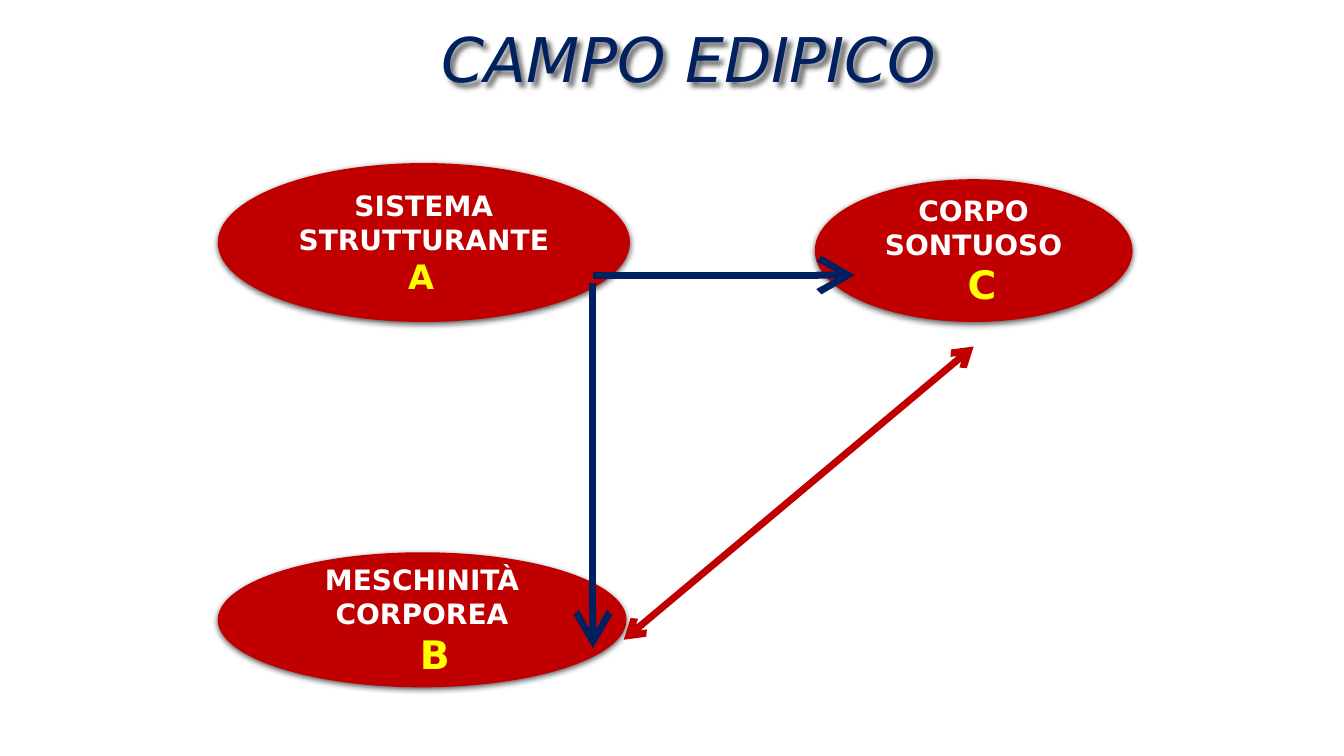
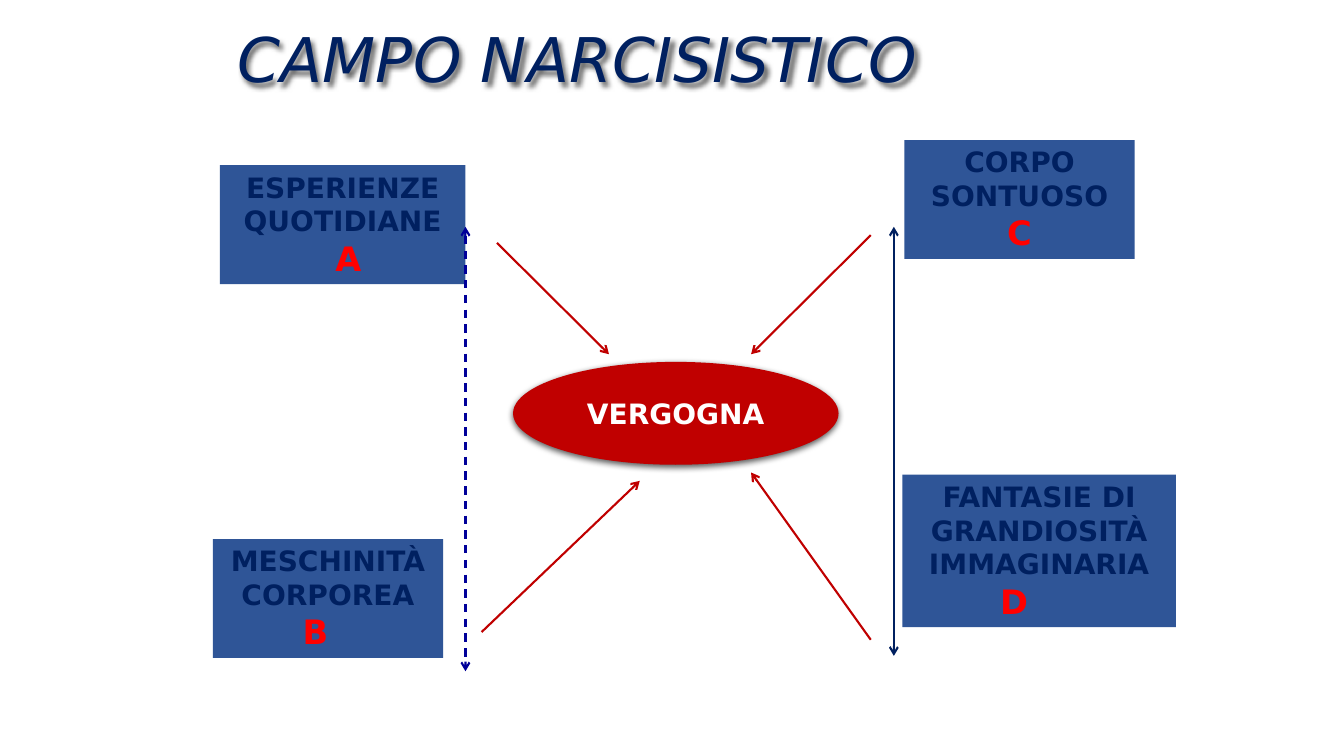
from lxml import etree
from pptx import Presentation
from pptx.dml.color import RGBColor
from pptx.enum.dml import MSO_LINE
from pptx.enum.shapes import MSO_CONNECTOR, MSO_SHAPE
from pptx.enum.text import MSO_ANCHOR, MSO_AUTO_SIZE, PP_ALIGN
from pptx.oxml.ns import qn
from pptx.util import Pt

CENTER, LEFT = PP_ALIGN.CENTER, PP_ALIGN.LEFT
MIDDLE, TOP = MSO_ANCHOR.MIDDLE, MSO_ANCHOR.TOP
NO_FIT, GROW = MSO_AUTO_SIZE.NONE, MSO_AUTO_SIZE.SHAPE_TO_FIT_TEXT
STRAIGHT, OVAL, DASH = MSO_CONNECTOR.STRAIGHT, MSO_SHAPE.OVAL, MSO_LINE.DASH

FONT = "DejaVu Sans"
NAVY = RGBColor(0x00, 0x20, 0x60)
INDIGO = RGBColor(0x00, 0x00, 0x99)
BLUE = RGBColor(0x2F, 0x55, 0x97)
CRIMSON = RGBColor(0xC0, 0x00, 0x00)
RED = RGBColor(0xFF, 0x00, 0x00)
YELLOW = RGBColor(0xFF, 0xFF, 0x00)
WHITE = RGBColor(0xFF, 0xFF, 0xFF)

# Shadows: blur, distance, angle, opacity in percent
TITLE_SHADOW = (4, 3, 45, 60)
OVAL_SHADOW = (4.5, 1.5, 90, 63)

# Concepts: box (left, top, width, height), label, letter, letter size, letter shift
# Arrows: from, to, colour, width, both ends, head size, dashed
SLIDES = [
    {
        "title": ("CAMPO EDIPICO", 168.5, CENTER),
        "ovals": [
            ((155.5, 116.5, 294.5, 113.5), "SISTEMA STRUTTURANTE", "A", 24, -2),
            ((582, 128, 227, 102), "CORPO SONTUOSO", "C", 28, 6),
            ((155.5, 394.5, 292, 96.5), "MESCHINITÀ CORPOREA", "B", 28, 9),
        ],
        "boxes": [],
        "arrows": [
            ((423.5, 196.5), (610.5, 196.5), NAVY, 5, False, "lg", False),
            ((423.5, 202.5), (423.5, 463), NAVY, 5, False, "lg", False),
            ((445.5, 457), (695.5, 247.5), CRIMSON, 5, True, "med", False),
        ],
    },
    {
        "title": ("CAMPO NARCISISTICO", 162.5, LEFT),
        "ovals": [((366.5, 258.5, 232.5, 73.5), "VERGOGNA", None, 0, 0)],
        "boxes": [
            ((157, 118, 175.5, 85), "ESPERIENZE QUOTIDIANE", "A", 24, 4),
            ((152, 385, 164.5, 85), "MESCHINITÀ CORPOREA", "B", 24, -9),
            ((646, 100, 164.5, 85), "CORPO SONTUOSO", "C", 24, 0),
            ((644.5, 339, 195.5, 109), "FANTASIE DI GRANDIOSITÀ IMMAGINARIA", "D", 24, -18),
        ],
        "arrows": [
            ((355, 173.5), (435, 253), CRIMSON, 1.5, False, "med", False),
            ((344, 451.5), (457, 343.5), CRIMSON, 1.5, False, "med", False),
            ((622, 168), (536.5, 253), CRIMSON, 1.5, False, "med", False),
            ((622, 457), (536.5, 337.5), CRIMSON, 1.5, False, "med", False),
            ((638.5, 162), (638.5, 468.5), NAVY, 1.5, True, "med", False),
            ((332.5, 162), (332.5, 479.5), INDIGO, 1.5, True, "med", True),
        ],
    },
]


def points(values):
    return [Pt(value) for value in values]


def add_shadow(shape, blur, distance, angle, opacity):
    shape.shadow.inherit = False
    effects = shape._element.spPr.find(qn("a:effectLst"))
    shadow = etree.SubElement(effects, qn("a:outerShdw"), blurRad=str(Pt(blur)),
                              dist=str(Pt(distance)), dir=str(angle * 60000),
                              algn="ctr", rotWithShape="0")
    color = etree.SubElement(shadow, qn("a:srgbClr"), val="000000")
    etree.SubElement(color, qn("a:alpha"), val=str(opacity * 1000))


def format_paragraph(paragraph, text, size, color, align=CENTER, bold=False, italic=False):
    paragraph.text = text
    paragraph.alignment = align
    font = paragraph.font
    font.name, font.size, font.bold, font.italic = FONT, Pt(size), bold, italic
    font.color.rgb = color


def add_title(slide, text, left, align):
    title = slide.shapes.title
    title.left, title.top, title.width, title.height = points((left, 0, 648, 90))
    frame = title.text_frame
    frame.vertical_anchor, frame.auto_size, frame.word_wrap = MIDDLE, NO_FIT, True
    format_paragraph(frame.paragraphs[0], text, 44, NAVY, align, italic=True)
    frame.paragraphs[0].line_spacing = 0.9
    add_shadow(title, *TITLE_SHADOW)


def write_concept(frame, label, color, letter, size, shift, letter_color):
    """Write a label and, below it, its letter moved sideways by shift points."""
    frame.word_wrap = True
    format_paragraph(frame.paragraphs[0], label, 20, color, bold=True)
    if letter:
        paragraph = frame.add_paragraph()
        format_paragraph(paragraph, letter, size, letter_color, bold=True)
        # A centred line moves by half of its margin.
        margin = "marL" if shift > 0 else "marR"
        paragraph._p.get_or_add_pPr().set(margin, str(Pt(2 * abs(shift))))


def add_oval(slide, bounds, label, letter, size, shift):
    oval = slide.shapes.add_shape(OVAL, *points(bounds))
    oval.fill.solid()
    oval.fill.fore_color.rgb = CRIMSON
    oval.line.fill.background()
    add_shadow(oval, *OVAL_SHADOW)
    oval.text_frame.vertical_anchor = MIDDLE
    write_concept(oval.text_frame, label, WHITE, letter, size, shift, YELLOW)


def add_box(slide, bounds, label, letter, size, shift):
    box = slide.shapes.add_textbox(*points(bounds))
    box.fill.solid()
    box.fill.fore_color.rgb = BLUE
    box.text_frame.vertical_anchor, box.text_frame.auto_size = TOP, GROW
    write_concept(box.text_frame, label, NAVY, letter, size, shift, RED)


def add_arrow(slide, start, end, color, width, both_ends, head_size, dashed):
    arrow = slide.shapes.add_connector(STRAIGHT, *points(start + end))
    arrow.line.color.rgb = color
    arrow.line.width = Pt(width)
    if dashed:
        arrow.line.dash_style = DASH
    outline = arrow.line._get_or_add_ln()
    for tag in ("a:headEnd", "a:tailEnd") if both_ends else ("a:tailEnd",):
        etree.SubElement(outline, qn(tag), type="arrow", w=head_size, len=head_size)
    etree.SubElement(arrow._element.spPr, qn("a:effectLst"))


def main():
    presentation = Presentation()
    presentation.slide_width, presentation.slide_height = Pt(960), Pt(540)
    title_only = presentation.slide_layouts[5]
    for content in SLIDES:
        slide = presentation.slides.add_slide(title_only)
        add_title(slide, *content["title"])
        for concept in content["boxes"]:
            add_box(slide, *concept)
        for concept in content["ovals"]:
            add_oval(slide, *concept)
        for arrow in content["arrows"]:
            add_arrow(slide, *arrow)
    presentation.save("out.pptx")


if __name__ == "__main__":
    main()
